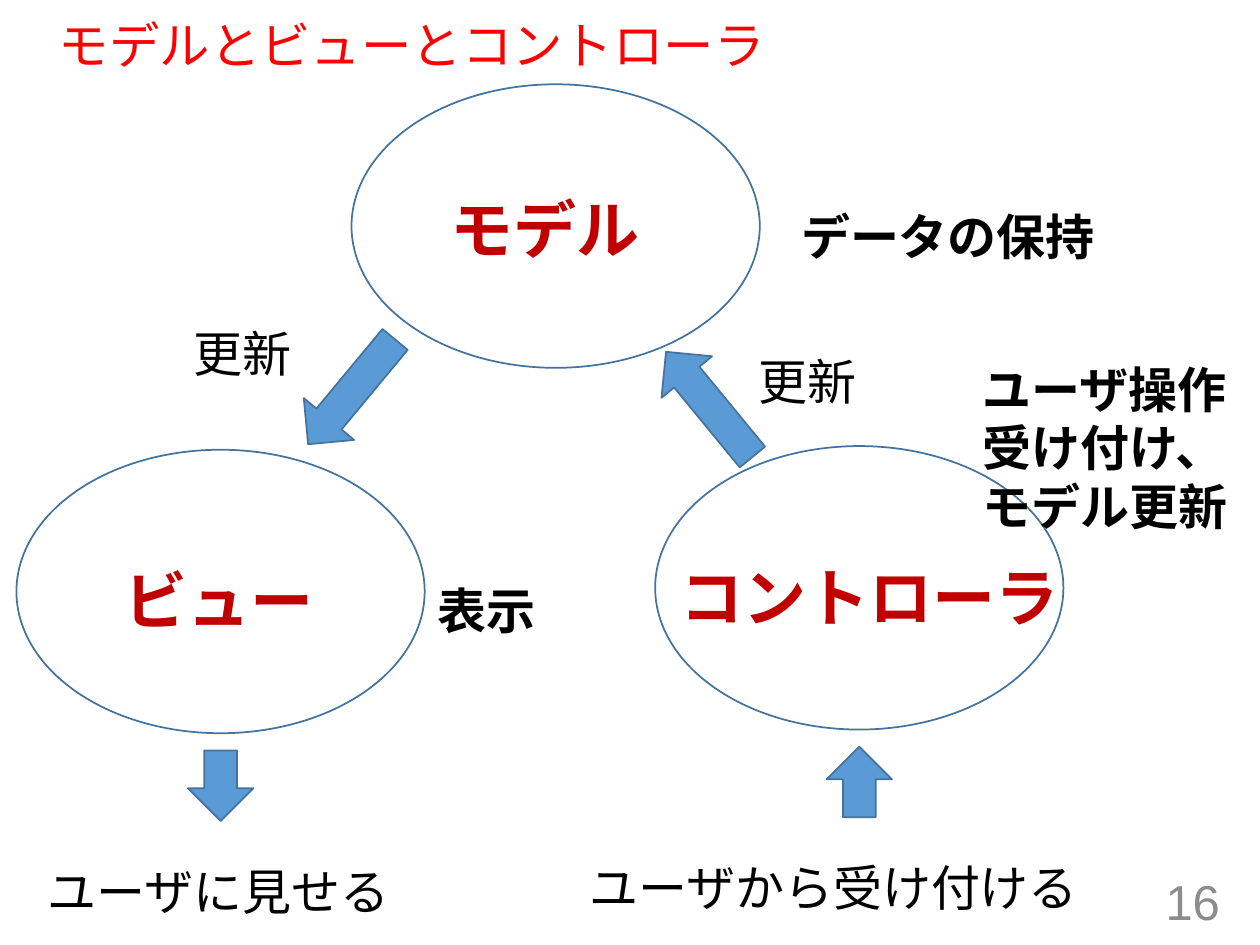
from pptx import Presentation
from pptx.dml.color import RGBColor
from pptx.enum.shapes import MSO_SHAPE
from pptx.enum.text import MSO_ANCHOR, MSO_AUTO_SIZE, PP_ALIGN
from pptx.util import Pt

OVAL, UP_ARROW = MSO_SHAPE.OVAL, MSO_SHAPE.UP_ARROW
TOP, MIDDLE = MSO_ANCHOR.TOP, MSO_ANCHOR.MIDDLE
LEFT, RIGHT = PP_ALIGN.LEFT, PP_ALIGN.RIGHT
GROW, FIXED = MSO_AUTO_SIZE.SHAPE_TO_FIT_TEXT, MSO_AUTO_SIZE.NONE
NODE_W, NODE_H = 233.3, 162
ARROW_W = 37.4


def color(value):
    return RGBColor.from_string(value)


def add_text(s, text, box, size=28, font="Calibri", fill="000000", bold=False,
             align=LEFT, anchor=TOP, wrap=False, spacing=1.0):
    sp = s.shapes.add_textbox(*map(Pt, box))
    tf = sp.text_frame
    tf.word_wrap = wrap
    tf.auto_size = FIXED if wrap else GROW
    tf.vertical_anchor = anchor
    for i, line in enumerate(text.split("\n")):
        p = tf.add_paragraph() if i else tf.paragraphs[0]
        p.alignment = align
        p.line_spacing = spacing
        r = p.add_run()
        r.text = line
        r.font.size = Pt(size)
        r.font.name = font
        r.font.bold = bold
        r.font.color.rgb = color(fill)


def add_outlined(s, kind, box, fill=None, rotation=0):
    sp = s.shapes.add_shape(kind, *map(Pt, box))
    sp.shadow.inherit = False
    sp.rotation = rotation
    sp.line.color.rgb = color("43739E")
    sp.line.width = Pt(1)
    if fill:
        sp.fill.solid()
        sp.fill.fore_color.rgb = color(fill)
    else:
        sp.fill.background()


def add_arrow(s, x, y, height, rotation=0):
    add_outlined(s, UP_ARROW, (x, y, ARROW_W, height), "5B9BD5", rotation)


def add_node(s, x, y, name, name_box, note, note_box):
    def place(box):
        dx, dy, w, h = box
        return x + dx, y + dy, w, h

    add_outlined(s, OVAL, (x, y, NODE_W, NODE_H))
    add_text(s, name, place(name_box), size=36, fill="C00000", bold=True)
    add_text(s, note, place(note_box), bold=True)


def add_user_link(s, x, y, caption, dx, width, rotation):
    add_arrow(s, x + (NODE_W - ARROW_W) / 2, y + 171.8, 40.3, rotation)
    add_text(s, caption, (x + dx, y + 231.8, width, 41))


def add_update(s, x, y, rotation, dx, dy):
    add_arrow(s, x, y, 77.8, rotation)
    add_text(s, "更新", (x + dx, y + dy, 71.3, 41))


def add_frame(s):
    add_text(s, "モデルとビューとコントローラ", (26.6, 9.4, 666, 36.7), size=28.8,
             font="Arial", fill="FF0000", anchor=MIDDLE, wrap=True, spacing=0.9)
    add_text(s, "16", (542.2, 500.4, 162, 28.8), font="Arial", fill="8C8C8C",
             align=RIGHT, anchor=MIDDLE, wrap=True)


def main():
    prs = Presentation()
    prs.slide_width, prs.slide_height = Pt(720), Pt(540)
    s = prs.slides.add_slide(prs.slide_layouts[6])
    model, view, controller = (200.9, 48.2), (9.4, 257), (374.4, 254.9)

    add_frame(s)
    add_node(s, *model, "モデル", (49.7, 56.9, 123.8, 51),
             "データの保持", (249.8, 66.3, 184.3, 41))
    add_node(s, *view, "ビュー", (54.7, 60.5, 123.8, 51),
             "表示", (233.3, 71.3, 71.3, 41))
    add_node(s, *controller, "コントローラ", (7.2, 60.5, 232.6, 51),
             "ユーザ操作\n受け付け、\nモデル更新", (180, -53.3, 156.2, 108.7))
    add_update(s, 182.2, 185, 219.7, -78.5, -3.6)
    add_update(s, 386.6, 192.2, 320.6, 39.6, 5.1)
    add_user_link(s, *view, "ユーザに見せる", 10.8, 212.4, 180)
    add_user_link(s, *controller, "ユーザから受け付ける", -44.6, 297.4, 0)
    prs.save("out.pptx")


if __name__ == "__main__":
    main()
